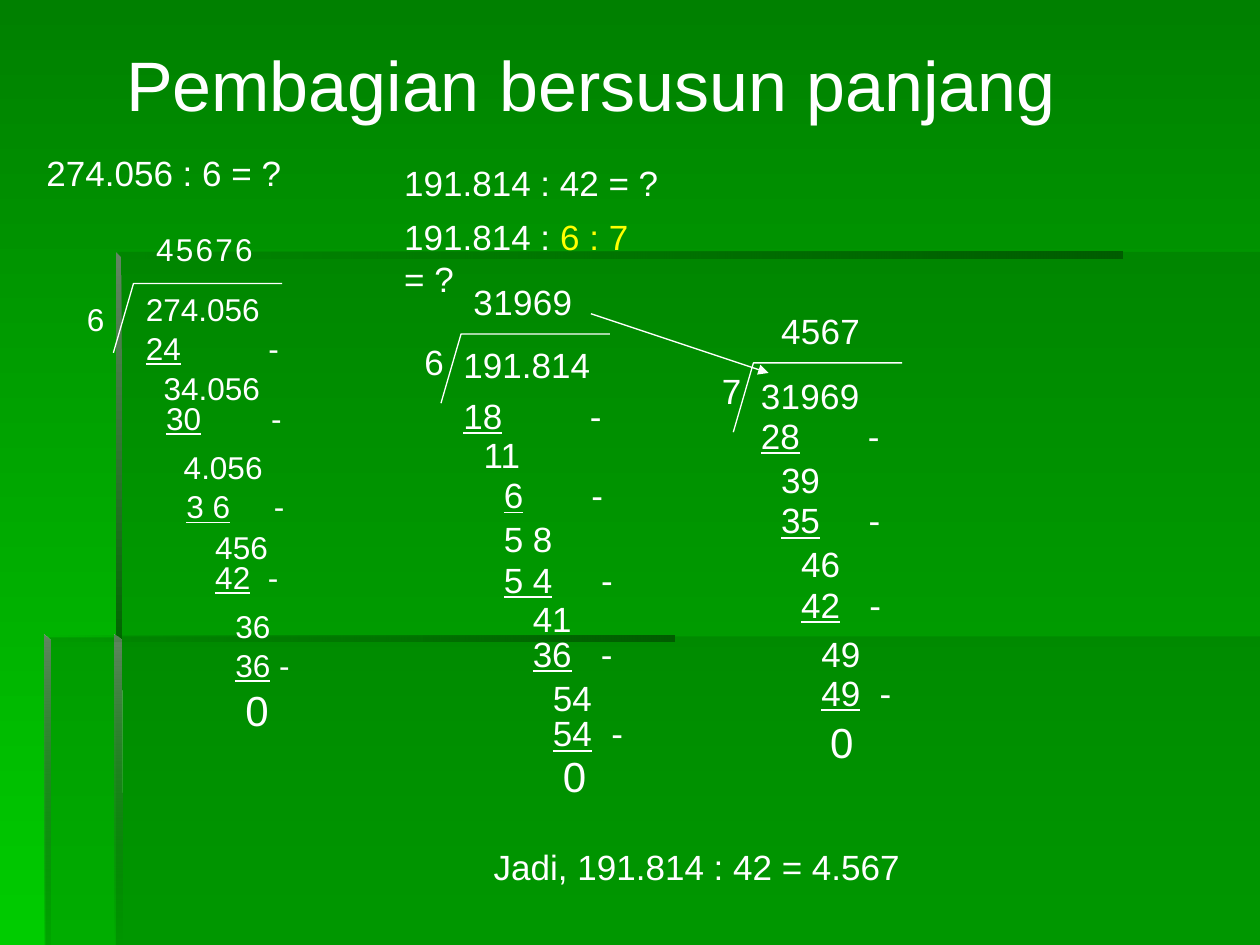
from lxml.etree import SubElement
from pptx import Presentation
from pptx.dml.color import RGBColor
from pptx.enum.shapes import MSO_CONNECTOR
from pptx.enum.text import MSO_ANCHOR, MSO_AUTO_SIZE, PP_ALIGN
from pptx.oxml.ns import qn
from pptx.util import Inches, Pt

COLORS = {
    "text": "FFFFFF",
    "accent": "FFFF00",
    "top": "008000",
    "bottom": "00CC00",
    "panel": "006600",
    "bar": "005D00",
    "edge": "628562",
}
FONT = "Arial"
DIGIT_STEP = 0.157
SPACE_EM = 0.278  # a digit is two spaces wide

PANELS = [
    [(0.92, 5.05), (0.92, 7.5), (10, 7.5), (10, 5.05)],
    [(0.94, 5.06), (0.36, 5.06), (0.36, 7.5), (10, 7.5), (10, 2), (0.94, 2)],
]
# outline, first colour, angle, opacity of the last stop
BEVELS = [
    ([(0.92, 2), (0.92, 2.05), (8.91, 2.05), (8.91, 2)], "bar", 180, 0),
    ([(0.92, 2), (0.92, 5.1), (0.97, 5.1), (0.96, 2.04)], "edge", 270, 100),
    ([(0.91, 7.5), (0.97, 7.5), (0.96, 5.08), (0.91, 5.04)], "edge", 270, 0),
    ([(0.35, 5.04), (0.35, 5.09), (5.35, 5.09), (5.35, 5.04)], "bar", 180, 0),
    ([(0.35, 5.04), (0.35, 7.5), (0.4, 7.5), (0.4, 5.09)], "edge", 270, 10),
]

# Remainders: left, top, width, text.
# Subtractions: the same, then rule beyond the digits and gap before the minus, in spaces.
DIVISIONS = [
    {
        "size": 18, "bracket": (2.24, 2.25), "divisor": (0.59, 2.33, 0.39, "6"),
        "quotient": (1.14, 1.78, 0.32, "45676"),
        "remainders": [
            (1.06, 2.25, 1.26, "274.056"), (1.2, 2.88, 1.12, "34.056"),
            (1.36, 3.51, 1.12, "4.056"), (1.61, 4.14, 0.71, "456"),
            (1.77, 4.77, 0.55, "36"),
        ],
        "subtractions": [
            (1.06, 2.56, 1.26, "24", 9, 1), (1.22, 3.12, 1.18, "30", 6, 2),
            (1.38, 3.82, 1.18, "3 6", 4, 1), (1.61, 4.38, 0.79, "42", 1, 1),
            (1.77, 5.08, 0.87, "36", 0, 1),
        ],
        "zero": (1.85, 5.38, 0.47, "0"),
    },
    {
        "size": 20, "bracket": (4.84, 2.65), "divisor": (3.27, 2.65, 0.47, "6"),
        "quotient": (3.66, 2.18, 0.47, "31969"),
        "remainders": [
            (3.58, 2.68, 1.34, "191.814"), (3.74, 3.39, 0.71, "11"),
            (3.9, 4.06, 0.71, "5 8"), (4.13, 4.69, 0.71, "41"),
            (4.29, 5.32, 0.71, "54"),
        ],
        "subtractions": [
            (3.58, 3.08, 1.34, "18", 8, 1), (3.9, 3.71, 1.03, "6", 6, 1),
            (3.9, 4.38, 1.18, "5 4", 3, 2), (4.13, 4.97, 0.95, "36", 2, 1),
            (4.29, 5.6, 0.95, "54", 1, 1),
        ],
        "zero": (4.37, 5.91, 0.47, "0"),
    },
    {
        "size": 20, "bracket": (7.16, 2.88), "divisor": (5.63, 2.88, 0.71, "7"),
        "quotient": (6.1, 2.41, 0.31, "4567"),
        "dividend": (5.94, 2.92, 0.47, "31969"),
        "remainders": [
            (6.1, 3.59, 0.71, "39"), (6.26, 4.26, 0.71, "46"),
            (6.42, 4.97, 0.71, "49"),
        ],
        "subtractions": [
            (5.94, 3.24, 1.18, "28", 6, 1), (6.1, 3.91, 1.02, "35", 4, 1),
            (6.26, 4.58, 0.95, "42", 2, 1), (6.42, 5.28, 0.87, "49", 1, 1),
        ],
        "zero": (6.49, 5.64, 0.71, "0"),
    },
]


def rgb(name):
    return RGBColor.from_string(COLORS[name])


def style(span, size, color="text"):
    span.font.name = FONT
    span.font.size = Pt(size)
    span.font.color.rgb = rgb(color)


def set_opacity(color_parent, percent):
    color = color_parent.find(".//" + qn("a:srgbClr"))
    SubElement(color, qn("a:alpha"), val=str(percent * 1000))


def set_gradient(fill, first, last, angle):
    fill.gradient()
    fill.gradient_angle = angle
    for stop, name in zip(fill.gradient_stops, (first, last)):
        stop.color.rgb = rgb(name)


def add_outline(shapes, points, close=True):
    corners = [(Inches(x), Inches(y)) for x, y in points]
    builder = shapes.build_freeform(*corners[0])
    builder.add_line_segments(corners[1:], close=close)
    outline = builder.convert_to_shape()
    outline.shadow.inherit = False
    return outline


def add_backdrop(page):
    set_gradient(page.background.fill, "top", "bottom", 270)
    shapes = page.shapes.add_group_shape().shapes
    for points in PANELS:
        panel = add_outline(shapes, points)
        panel.fill.solid()
        panel.fill.fore_color.rgb = rgb("panel")
        set_opacity(panel._element.spPr, 30)
        panel.line.fill.background()
    for points, first, angle, opacity in BEVELS:
        bevel = add_outline(shapes, points)
        set_gradient(bevel.fill, first, "panel", angle)
        set_opacity(bevel._element.spPr.findall(".//" + qn("a:gs"))[-1], opacity)
        bevel.line.fill.background()


def add_title(page, text):
    title = page.shapes.title
    title.left, title.top = Inches(0.9), Inches(0.28)
    title.width, title.height = Inches(8.03), Inches(0.77)
    frame = title.text_frame
    frame.text = text
    frame.auto_size = MSO_AUTO_SIZE.NONE
    frame.vertical_anchor = MSO_ANCHOR.TOP
    frame.paragraphs[0].alignment = PP_ALIGN.LEFT
    style(frame.paragraphs[0].runs[0], 40)


def add_text(shapes, left, top, width, spans, size=20):
    """Add a one-paragraph box; spans is a string or a list of (text, colour)."""
    height = {18: 0.4, 20: 0.43, 24: 0.5}[size]
    box = shapes.add_textbox(Inches(left), Inches(top), Inches(width), Inches(height))
    box.text_frame.word_wrap = True
    para = box.text_frame.paragraphs[0]
    for text, color in [(spans, "text")] if isinstance(spans, str) else spans:
        span = para.add_run()
        span.text = text
        style(span, size, color)
    return box


def add_digits(shapes, left, top, width, number, size):
    for index, digit in enumerate(number):
        add_text(shapes, left + index * DIGIT_STEP, top, width, digit, size)


def add_subtraction(page, left, top, width, number, blanks, gap, size):
    """Underline the number up to a tab stop and set the minus at a second one."""
    underlined = number + "\t" if blanks else number
    spans = [(underlined, "text"), ("\t-", "text")]
    box = add_text(page.shapes, left, top, width, spans, size)
    box.text_frame.margin_right = 0
    para = box.text_frame.paragraphs[0]
    para.runs[0].font.underline = True
    rule = sum(1 if char == " " else 2 for char in number) + blanks
    stops = [rule, rule + gap] if blanks else [rule + gap]
    tabs = SubElement(para._p.get_or_add_pPr(), qn("a:tabLst"))
    for stop in stops:
        position = Pt(stop * SPACE_EM * size)
        SubElement(tabs, qn("a:tab"), pos=str(int(position)), algn="l")


def add_bracket(page, right, top):
    points = [(right, top), (right - 1.18, top), (right - 1.34, top + 0.55)]
    bracket = add_outline(page.shapes, points, close=False)
    bracket.fill.background()
    bracket.line.color.rgb = rgb("text")
    bracket.line.width = Pt(0.75)


def add_division(page, division):
    size = division["size"]
    add_bracket(page, *division["bracket"])
    add_digits(page.shapes, *division["quotient"], size)
    if "dividend" in division:
        add_digits(page.shapes.add_group_shape().shapes, *division["dividend"], size)
    for entry in [division["divisor"], *division["remainders"]]:
        add_text(page.shapes, *entry, size)
    for entry in division["subtractions"]:
        add_subtraction(page, *entry, size)
    add_text(page.shapes, *division["zero"], 24)


def add_arrow(page, start, end):
    ends = [Inches(value) for value in (*start, *end)]
    arrow = page.shapes.add_connector(MSO_CONNECTOR.STRAIGHT, *ends)
    arrow.line.color.rgb = rgb("text")
    arrow.line.width = Pt(0.75)
    SubElement(arrow.line._get_or_add_ln(), qn("a:tailEnd"), type="triangle")
    SubElement(arrow._element.spPr, qn("a:effectLst"))


def main():
    deck = Presentation()
    deck.slide_width, deck.slide_height = Inches(10), Inches(7.5)
    page = deck.slides.add_slide(deck.slide_layouts[5])
    add_backdrop(page)
    add_title(page, "Pembagian bersusun panjang")
    add_text(page.shapes, 0.27, 1.15, 2.21, "274.056 : 6 = ?")
    add_text(page.shapes, 3.11, 1.23, 2.44, "191.814 : 42 = ?")
    factors = [("191.814 : ", "text"), ("6 : 7", "accent"), (" = ?", "text")]
    add_text(page.shapes, 3.11, 1.66, 2.44, factors)
    for division in DIVISIONS:
        add_division(page, division)
    add_arrow(page, (4.69, 2.49), (6.1, 2.96))
    add_text(page.shapes, 3.82, 6.66, 3.62, "Jadi, 191.814 : 42 = 4.567")
    deck.save("out.pptx")


if __name__ == "__main__":
    main()
